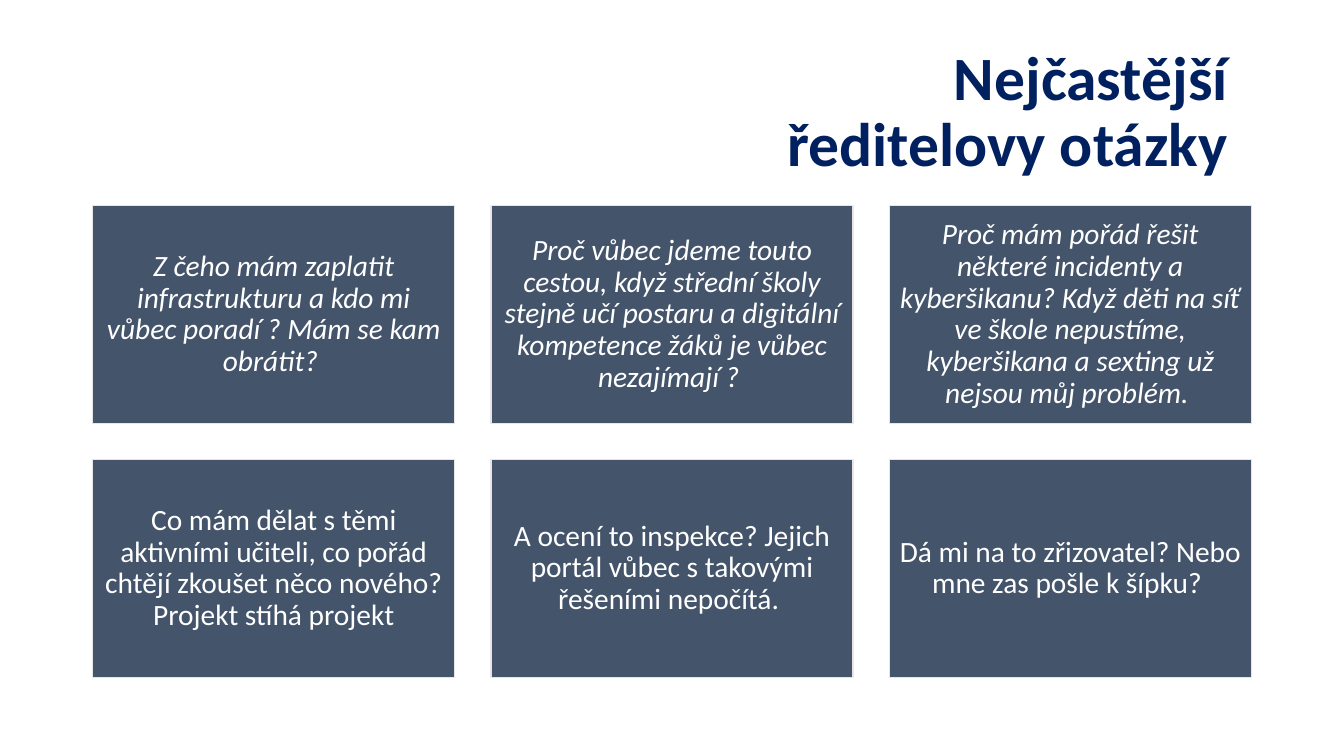
import dataclasses
import typing

import pptx
import pptx.dml.color
import pptx.enum.shapes
import pptx.enum.text
import pptx.slide
import pptx.text.text
import pptx.util

Inches = pptx.util.Inches
Pt = pptx.util.Pt
Align = pptx.enum.text.PP_ALIGN

COLUMNS = 3
GRID_LEFT, GRID_TOP = 0.92, 2.04
CARD_WIDTH, CARD_HEIGHT = 3.59, 2.16
GAP = 0.36


@dataclasses.dataclass
class Question:
    text: str
    italic: bool = False


QUESTIONS = [
    Question("Z čeho mám zaplatit infrastrukturu a kdo mi vůbec poradí ? "
             "Mám se kam obrátit? ", italic=True),
    Question("Proč vůbec jdeme touto cestou, když střední školy stejně učí postaru "
             "a digitální kompetence žáků je vůbec nezajímají ? ", italic=True),
    Question("Proč mám pořád řešit některé incidenty a kyberšikanu? "
             "Když děti na síť ve škole nepustíme, kyberšikana a sexting "
             "už nejsou můj problém. ", italic=True),
    Question("Co mám dělat s těmi aktivními učiteli, co pořád chtějí zkoušet "
             "něco nového? Projekt stíhá projekt"),
    Question("A ocení to inspekce? Jejich portál vůbec s takovými řešeními nepočítá. "),
    Question("Dá mi na to zřizovatel? Nebo mne zas pošle k šípku? "),
]


def color(value: str) -> pptx.dml.color.RGBColor:
    return pptx.dml.color.RGBColor.from_string(value)


def set_attributes(target: typing.Any, values: dict[str, typing.Any]) -> None:
    for name, value in values.items():
        setattr(target, name, value)


def write_text(frame: pptx.text.text.TextFrame, text: str, align: Align,
               ink: str, font: dict[str, typing.Any]) -> None:
    """Fill the frame with one formatted paragraph; a vertical tab breaks the line."""
    set_attributes(frame, {
        "word_wrap": True,
        "auto_size": pptx.enum.text.MSO_AUTO_SIZE.NONE,
        "vertical_anchor": pptx.enum.text.MSO_ANCHOR.MIDDLE,
    })
    para = frame.paragraphs[0]
    para.text = text
    set_attributes(para, {"alignment": align, "line_spacing": 0.9})
    for span in para.runs:
        set_attributes(span.font, {"name": "Calibri", **font})
        span.font.color.rgb = color(ink)


def add_title(page: pptx.slide.Slide) -> None:
    title = page.shapes.title
    set_attributes(title, {"left": Inches(0.92), "top": Inches(0.4),
                           "width": Inches(11.5), "height": Inches(1.45)})
    write_text(title.text_frame, "Nejčastější \vředitelovy otázky ", Align.RIGHT,
               "002060", {"size": Pt(44), "bold": True})


def add_card(page: pptx.slide.Slide, question: Question, left: float, top: float) -> None:
    box = page.shapes.add_shape(
        pptx.enum.shapes.MSO_SHAPE.RECTANGLE,
        Inches(left), Inches(top), Inches(CARD_WIDTH), Inches(CARD_HEIGHT))
    box.shadow.inherit = False
    box.fill.solid()
    box.fill.fore_color.rgb = color("44546A")
    box.line.color.rgb = color("E7E6E6")
    box.line.width = Pt(1)
    sides = ("left", "top", "right", "bottom")
    set_attributes(box.text_frame, {f"margin_{side}": Inches(0.09) for side in sides})
    write_text(box.text_frame, question.text, Align.CENTER, "FFFFFF",
               {"size": Pt(21), "italic": question.italic})


def main() -> None:
    deck = pptx.Presentation()
    set_attributes(deck, {"slide_width": Inches(13.33), "slide_height": Inches(7.5)})
    page = deck.slides.add_slide(deck.slide_layouts.get_by_name("Title Only"))
    add_title(page)
    for index, question in enumerate(QUESTIONS):
        row, column = divmod(index, COLUMNS)
        add_card(page, question,
                 GRID_LEFT + column * (CARD_WIDTH + GAP),
                 GRID_TOP + row * (CARD_HEIGHT + GAP))
    deck.save("out.pptx")


if __name__ == "__main__":
    main()
